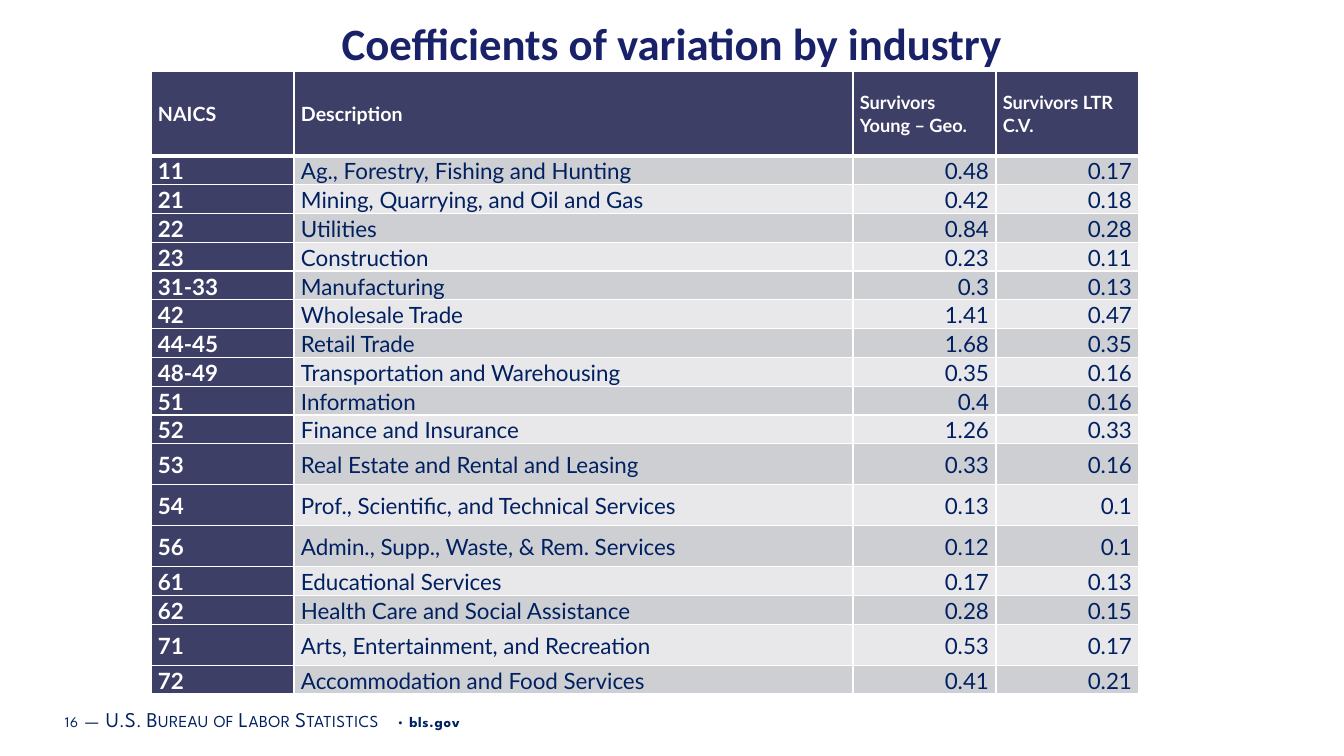
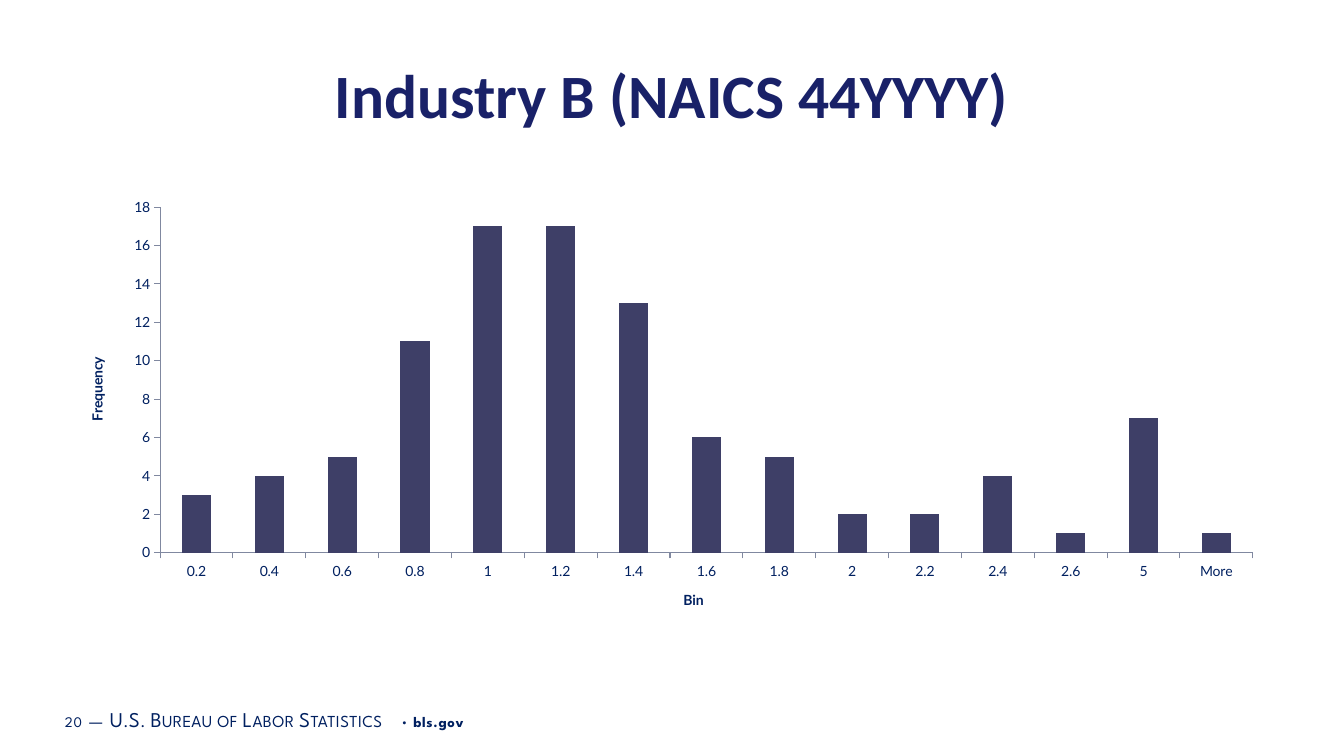
from dataclasses import dataclass

from lxml import etree
from pptx import Presentation
from pptx.chart.data import CategoryChartData
from pptx.dml.color import RGBColor
from pptx.enum.chart import XL_CHART_TYPE, XL_TICK_MARK
from pptx.enum.text import MSO_ANCHOR, MSO_AUTO_SIZE, PP_ALIGN
from pptx.oxml.ns import qn
from pptx.util import Emu, Pt

COLUMN_CLUSTERED = XL_CHART_TYPE.COLUMN_CLUSTERED
TICK_OUTSIDE, TICK_NONE = XL_TICK_MARK.OUTSIDE, XL_TICK_MARK.NONE
TOP, MIDDLE = MSO_ANCHOR.TOP, MSO_ANCHOR.MIDDLE
NO_AUTOFIT = MSO_AUTO_SIZE.NONE
LEFT, CENTER, RIGHT = PP_ALIGN.LEFT, PP_ALIGN.CENTER, PP_ALIGN.RIGHT

EMU_PER_PX = 914400 / 100.8
SLIDE_WIDTH, SLIDE_HEIGHT = 1344, 756
TITLE_ONLY_LAYOUT = 5


@dataclass(frozen=True)
class Theme:
    title_color: str = "192168"
    text_color: str = "002060"
    accent: str = "3E3F67"
    white: str = "FFFFFF"
    bands: tuple = ("CECFD3", "E8E8EB")
    axis_color: str = "8088A0"
    title_font: str = "Calibri"
    body_font: str = "Lato"
    footer_font: str = "League Spartan"
    header_size: float = 14
    narrow_header_size: float = 13
    cell_size: float = 16
    chart_size: float = 10
    footer_size: float = 10.5
    footer_caps_size: float = 15
    footer_gap_size: float = 16
    cell_line_spacing: float = 1.07


INDUSTRY_HEADERS = ["NAICS", "Description", "Survivors Young – Geo.", "Survivors LTR C.V."]
INDUSTRIES = [
    ("11", "Ag., Forestry, Fishing and Hunting", "0.48", "0.17"),
    ("21", "Mining, Quarrying, and Oil and Gas", "0.42", "0.18"),
    ("22", "Utilities", "0.84", "0.28"),
    ("23", "Construction", "0.23", "0.11"),
    ("31-33", "Manufacturing", "0.3", "0.13"),
    ("42", "Wholesale Trade", "1.41", "0.47"),
    ("44-45", "Retail Trade", "1.68", "0.35"),
    ("48-49", "Transportation and Warehousing", "0.35", "0.16"),
    ("51", "Information", "0.4", "0.16"),
    ("52", "Finance and Insurance", "1.26", "0.33"),
    ("53", "Real Estate and Rental and Leasing", "0.33", "0.16"),
    ("54", "Prof., Scientific, and Technical Services", "0.13", "0.1"),
    ("56", "Admin., Supp., Waste, & Rem. Services", "0.12", "0.1"),
    ("61", "Educational Services", "0.17", "0.13"),
    ("62", "Health Care and Social Assistance", "0.28", "0.15"),
    ("71", "Arts, Entertainment, and Recreation", "0.53", "0.17"),
    ("72", "Accommodation and Food Services", "0.41", "0.21"),
]
TALL_INDUSTRIES = {"53", "54", "56", "71"}
COLUMN_WIDTHS = (143, 559, 143, 143)
HEADER_HEIGHT, ROW_HEIGHT, TALL_ROW_HEIGHT = 85, 28, 41

BINS = ["0.2", "0.4", "0.6", "0.8", "1", "1.2", "1.4", "1.6", "1.8",
        "2", "2.2", "2.4", "2.6", "5", "More"]
FREQUENCIES = [3, 4, 5, 11, 17, 17, 13, 6, 5, 2, 2, 4, 1, 7, 1]


def px(length):
    return Emu(round(length * EMU_PER_PX))


def rgb(color):
    return RGBColor.from_string(color)


def add_run(paragraph, text, *, size, font, color, bold=False, spacing=None, small_caps=False):
    """Append a formatted run; spacing is the letter spacing in points."""
    run = paragraph.add_run()
    run.text = text
    run.font.size = Pt(size)
    run.font.name = font
    run.font.bold = bold
    run.font.color.rgb = rgb(color)
    properties = run._r.get_or_add_rPr()
    if spacing is not None:
        properties.set("spc", str(round(spacing * 100)))
    if small_caps:
        properties.set("cap", "small")


def set_cell_borders(cell, color, left=1, right=1, top=1, bottom=1):
    """Draw solid borders; widths are in points."""
    properties = cell._tc.get_or_add_tcPr()
    widths = {"a:lnL": left, "a:lnR": right, "a:lnT": top, "a:lnB": bottom}
    for index, (tag, width) in enumerate(widths.items()):
        line = etree.Element(qn(tag), w=str(Pt(width)))
        fill = etree.SubElement(line, qn("a:solidFill"))
        etree.SubElement(fill, qn("a:srgbClr"), val=color)
        properties.insert(index, line)


class Deck:
    def __init__(self, theme):
        self.theme = theme
        self.presentation = Presentation()
        self.presentation.slide_width = px(SLIDE_WIDTH)
        self.presentation.slide_height = px(SLIDE_HEIGHT)
        self.slide = None

    def add_slide(self, number, title, title_top, title_size):
        layout = self.presentation.slide_layouts[TITLE_ONLY_LAYOUT]
        self.slide = self.presentation.slides.add_slide(layout)
        self.add_title(title, title_top, title_size)
        self.add_footer(number)

    def add_title(self, text, top, size):
        shape = self.slide.shapes.title
        shape.left, shape.top, shape.width, shape.height = map(px, (67, top, 1210, 88))
        frame = shape.text_frame
        frame.auto_size = NO_AUTOFIT
        frame.vertical_anchor = TOP
        frame.margin_top = px(7)
        paragraph = frame.paragraphs[0]
        paragraph.alignment = CENTER
        add_run(paragraph, text, size=size, font=self.theme.title_font,
                color=self.theme.title_color, bold=True)

    def add_footer(self, number):
        theme = self.theme
        frame = self.slide.shapes.add_textbox(px(58), px(699), px(851), px(40)).text_frame
        frame.word_wrap = True
        frame.vertical_anchor = MIDDLE
        frame.margin_left = frame.margin_right = px(7)
        frame.margin_top = frame.margin_bottom = px(4)
        plain = {"size": theme.footer_size, "spacing": 0.5}
        gap = {"size": theme.footer_gap_size, "spacing": 0.5}
        caps = {"size": theme.footer_caps_size, "spacing": 0.3, "small_caps": True}
        for text, style in (
            (str(number), plain),
            (" ", gap),
            ("—", caps),
            (" ", gap),
            ("U.S. Bureau of Labor Statistics", caps),
            (" • ", plain),
            ("bls.gov", {**plain, "bold": True}),
        ):
            add_run(frame.paragraphs[0], text, font=theme.footer_font,
                    color=theme.text_color, **style)

    def fill_cell(self, cell, text, fill, alignment=LEFT, **style):
        cell.fill.solid()
        cell.fill.fore_color.rgb = rgb(fill)
        cell.vertical_anchor = MIDDLE
        cell.margin_left = cell.margin_right = px(7)
        cell.margin_top = cell.margin_bottom = 0
        paragraph = cell.text_frame.paragraphs[0]
        paragraph.alignment = alignment
        paragraph.line_spacing = self.theme.cell_line_spacing
        add_run(paragraph, text, font=self.theme.body_font, **style)

    def add_industry_table(self, left, top):
        theme = self.theme
        heights = [HEADER_HEIGHT] + [
            TALL_ROW_HEIGHT if industry[0] in TALL_INDUSTRIES else ROW_HEIGHT
            for industry in INDUSTRIES
        ]
        table = self.slide.shapes.add_table(
            len(heights), len(COLUMN_WIDTHS), px(left), px(top),
            px(sum(COLUMN_WIDTHS)), px(sum(heights))).table
        for column, width in zip(table.columns, COLUMN_WIDTHS):
            column.width = px(width)
        for row, height in zip(table.rows, heights):
            row.height = px(height)

        for column, text in enumerate(INDUSTRY_HEADERS):
            cell = table.cell(0, column)
            size = theme.header_size if column < 2 else theme.narrow_header_size
            self.fill_cell(cell, text, theme.accent, size=size, color=theme.white, bold=True)
            set_cell_borders(cell, theme.white, bottom=3)

        for row, industry in enumerate(INDUSTRIES, start=1):
            band = theme.bands[(row - 1) % 2]
            for column, text in enumerate(industry):
                cell = table.cell(row, column)
                is_code = column == 0
                self.fill_cell(
                    cell, text, theme.accent if is_code else band,
                    alignment=RIGHT if column > 1 else LEFT,
                    size=theme.cell_size, bold=is_code,
                    color=theme.white if is_code else theme.text_color)
                set_cell_borders(cell, theme.white, top=3 if row == 1 else 1)

    def format_axis(self, axis, title):
        theme = self.theme
        axis.has_major_gridlines = False
        axis.major_tick_mark = TICK_OUTSIDE
        axis.minor_tick_mark = TICK_NONE
        axis.format.line.color.rgb = rgb(theme.axis_color)
        axis.format.line.width = Pt(0.75)
        add_run(axis.axis_title.text_frame.paragraphs[0], title, size=theme.chart_size,
                font=theme.body_font, color=theme.text_color, bold=True)

    def add_histogram(self, left, top, width, height):
        theme = self.theme
        data = CategoryChartData()
        data.categories = BINS
        data.add_series("Series 1", FREQUENCIES)
        chart = self.slide.shapes.add_chart(
            COLUMN_CLUSTERED, px(left), px(top), px(width), px(height), data).chart
        chart.has_title = False
        chart.has_legend = False
        chart.font.name = theme.body_font
        chart.font.size = Pt(theme.chart_size)
        chart.font.color.rgb = rgb(theme.text_color)
        self.format_axis(chart.category_axis, "Bin")
        self.format_axis(chart.value_axis, "Frequency")
        chart.value_axis.minimum_scale = 0
        chart.value_axis.maximum_scale = 18
        chart.value_axis.major_unit = 2
        plot = chart.plots[0]
        plot.vary_by_categories = False
        plot.gap_width = 150
        fill = plot.series[0].format.fill
        fill.solid()
        fill.fore_color.rgb = rgb(theme.accent)


def main():
    deck = Deck(Theme())
    deck.add_slide(16, "Coefficients of variation by industry", title_top=9, title_size=32)
    deck.add_industry_table(left=151, top=71)
    deck.add_slide(20, "Industry B (NAICS 44YYYY)", title_top=50, title_size=44)
    deck.add_histogram(left=67, top=190, width=1210, height=440)
    deck.presentation.save("out.pptx")


if __name__ == "__main__":
    main()
